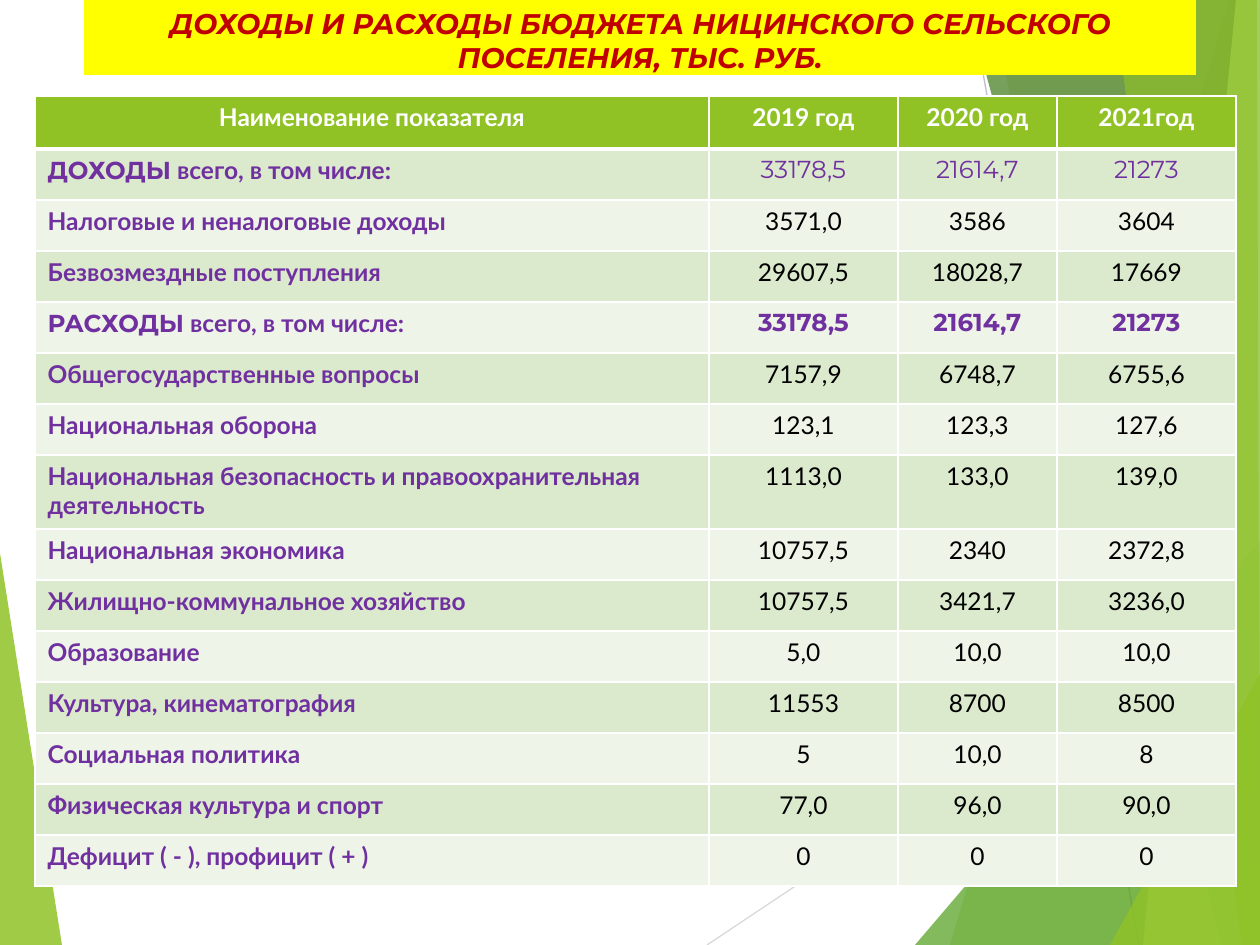
from dataclasses import dataclass

import pptx
import pptx.dml.color
import pptx.enum.text
import pptx.oxml
import pptx.oxml.ns
import pptx.util

PX = 914400 / 126  # EMU in one px
WIDTH, HEIGHT = 1260, 945
GREEN, WHITE, PURPLE, BLACK = "90C226", "FFFFFF", "7030A0", "000000"
BANDS = ("DBE9CD", "EEF4E8")
ALIGN = pptx.enum.text.PP_ALIGN
BODY = {"name": "Lato", "size": pptx.util.Pt(14), "bold": False}
LABEL = BODY | {"bold": True}
TOTAL = BODY | {"name": "Montserrat"}
TOTAL_BOLD = TOTAL | {"bold": True}


@dataclass
class Facet:
    points: list[tuple[int, int]]
    color: str
    opacity: int


@dataclass
class Row:
    label: str
    values: tuple[str, str, str]
    lead: str = ""
    value_format: dict | None = None
    height: int = 51


FACETS_LEFT = [Facet([(0, 553), (62, 945), (0, 945)], GREEN, 85)]
FACETS_RIGHT = [
    Facet([(1229, 0), (950, 945), (1260, 945), (1260, 0)], GREEN, 30),
    Facet([(993, 0), (1158, 945), (1260, 945), (1260, 0)], GREEN, 20),
    Facet([(915, 945), (1260, 541), (1260, 945)], "54A021", 72),
    Facet([(966, 0), (1222, 945), (1260, 945), (1260, 0)], "3F7819", 70),
    Facet([(1236, 0), (1143, 945), (1260, 945), (1260, 0)], "C0E474", 70),
    Facet([(1113, 0), (1242, 945), (1260, 945), (1257, 0)], GREEN, 65),
    Facet([(1110, 945), (1260, 674), (1260, 945)], GREEN, 80),
]
LINES = [((707, 945), (1260, 576), "D9D9D9"), ((970, 0), (1139, 945), "BFBFBF")]

TITLE = "ДОХОДЫ И РАСХОДЫ БЮДЖЕТА НИЦИНСКОГО СЕЛЬСКОГО ПОСЕЛЕНИЯ, ТЫС. РУБ."
HEADINGS = ("Наименование показателя", "2019 год", "2020 год", "2021год")
COLUMN_WIDTHS = (674, 189, 159, 179)
HEADER_HEIGHT = 53
ROWS = [
    Row(" всего, в том числе:", ("33178,5", "21614,7", "21273"), "ДОХОДЫ", TOTAL),
    Row("Налоговые и неналоговые доходы", ("3571,0", "3586", "3604")),
    Row("Безвозмездные поступления", ("29607,5", "18028,7", "17669")),
    Row(" всего, в том числе:", ("33178,5", "21614,7", "21273"), "РАСХОДЫ", TOTAL_BOLD),
    Row("Общегосударственные вопросы", ("7157,9", "6748,7", "6755,6")),
    Row("Национальная оборона", ("123,1", "123,3", "127,6")),
    Row("Национальная безопасность и правоохранительная деятельность",
        ("1113,0", "133,0", "139,0"), height=74),
    Row("Национальная экономика", ("10757,5", "2340", "2372,8")),
    Row("Жилищно-коммунальное хозяйство", ("10757,5", "3421,7", "3236,0")),
    Row("Образование", ("5,0", "10,0", "10,0")),
    Row("Культура, кинематография", ("11553", "8700", "8500")),
    Row("Социальная политика", ("5", "10,0", "8")),
    Row("Физическая культура и спорт", ("77,0", "96,0", "90,0")),
    Row("Дефицит ( - ), профицит ( + )", ("0", "0", "0")),
]


def px(value: int) -> int:
    return round(value * PX)


def paint(target, color: str) -> None:
    """Make a fill solid, then give the fill or font its colour."""
    if hasattr(target, "solid"):
        target.solid()
        target = target.fore_color
    else:
        target = target.color
    target.rgb = pptx.dml.color.RGBColor.from_string(color)


def add_span(para, text: str, color: str, values: dict) -> None:
    span = para.add_run()
    span.text = text
    for name, value in values.items():
        setattr(span.font, name, value)
    paint(span.font, color)


def draw_facet(page, facet: Facet) -> None:
    builder = page.shapes.build_freeform(*facet.points[0], scale=PX)
    builder.add_line_segments(facet.points[1:], close=True)
    shape = builder.convert_to_shape()
    shape.shadow.inherit = False
    shape.line.fill.background()
    paint(shape.fill, facet.color)
    color = shape.fill._xPr.find(".//" + pptx.oxml.ns.qn("a:srgbClr"))
    alpha = color.makeelement(pptx.oxml.ns.qn("a:alpha"), {"val": str(facet.opacity * 1000)})
    color.append(alpha)


def draw_line(page, start: tuple[int, int], end: tuple[int, int], color: str) -> None:
    line = page.shapes.add_connector(1, *map(px, start + end))
    line.line.width = pptx.util.Pt(0.75)
    paint(line.line.fill, color)
    properties = line._element.spPr
    properties.append(properties.makeelement(pptx.oxml.ns.qn("a:effectLst"), {}))


def set_borders(cell, widths: dict[str, int]) -> None:
    """Border elements come before the fill in the cell properties."""
    properties = cell._tc.get_or_add_tcPr()
    for index, (side, points) in enumerate(widths.items()):
        properties.insert(index, pptx.oxml.parse_xml(
            f'<a:{side} {pptx.oxml.ns.nsdecls("a")} w="{points * 12700}"><a:solidFill>'
            f'<a:srgbClr val="{WHITE}"/></a:solidFill></a:{side}>'))


def fill_cell(cell, spans: list[tuple[str, str, dict]], fill: str, align,
              top: int = 1, bottom: int = 1) -> None:
    paint(cell.fill, fill)
    set_borders(cell, {"lnL": 1, "lnR": 1, "lnT": top, "lnB": bottom})
    para = cell.text_frame.paragraphs[0]
    para.alignment = align
    for span in spans:
        add_span(para, *span)


def draw_title(page) -> None:
    title = page.shapes.title
    title.left, title.top, title.width, title.height = map(px, (84, 0, 1112, 75))
    paint(title.fill, "FFFF00")
    frame = title.text_frame
    for name, value in {"word_wrap": True, "auto_size": pptx.enum.text.MSO_AUTO_SIZE.NONE,
                        "vertical_anchor": pptx.enum.text.MSO_ANCHOR.TOP}.items():
        setattr(frame, name, value)
    para = frame.paragraphs[0]
    para.alignment = ALIGN.CENTER
    add_span(para, TITLE, "C00000", {"name": "Montserrat", "size": pptx.util.Pt(16.2),
                                     "bold": True, "italic": True})
    # Bring the title in front of the background
    title._element.getparent().append(title._element)


def draw_table(page) -> None:
    heights = [HEADER_HEIGHT] + [row.height for row in ROWS]
    area = (35, 96, sum(COLUMN_WIDTHS), sum(heights))
    table = page.shapes.add_table(len(heights), len(COLUMN_WIDTHS), *map(px, area)).table
    for column, width in zip(table.columns, COLUMN_WIDTHS):
        column.width = px(width)
    for table_row, height in zip(table.rows, heights):
        table_row.height = px(height)

    for column, heading in enumerate(HEADINGS):
        fill_cell(table.cell(0, column), [(heading, WHITE, LABEL)], GREEN, ALIGN.CENTER, bottom=3)

    for number, row in enumerate(ROWS, start=1):
        band = BANDS[(number - 1) % 2]
        top = 3 if number == 1 else 1
        spans = [(row.label, PURPLE, LABEL)]
        if row.lead:
            spans.insert(0, (row.lead, PURPLE, TOTAL_BOLD))
        fill_cell(table.cell(number, 0), spans, band, ALIGN.LEFT, top)
        color = PURPLE if row.value_format else BLACK
        for column, value in enumerate(row.values, start=1):
            fill_cell(table.cell(number, column), [(value, color, row.value_format or BODY)],
                      band, ALIGN.CENTER, top)


def main() -> None:
    deck = pptx.Presentation()
    deck.slide_width, deck.slide_height = px(WIDTH), px(HEIGHT)
    page = deck.slides.add_slide(deck.slide_layouts[5])

    # Background facets and thin lines
    for facet in FACETS_LEFT:
        draw_facet(page, facet)
    for line in LINES:
        draw_line(page, *line)
    for facet in FACETS_RIGHT:
        draw_facet(page, facet)

    # Content
    draw_title(page)
    draw_table(page)
    deck.save("out.pptx")


if __name__ == "__main__":
    main()
